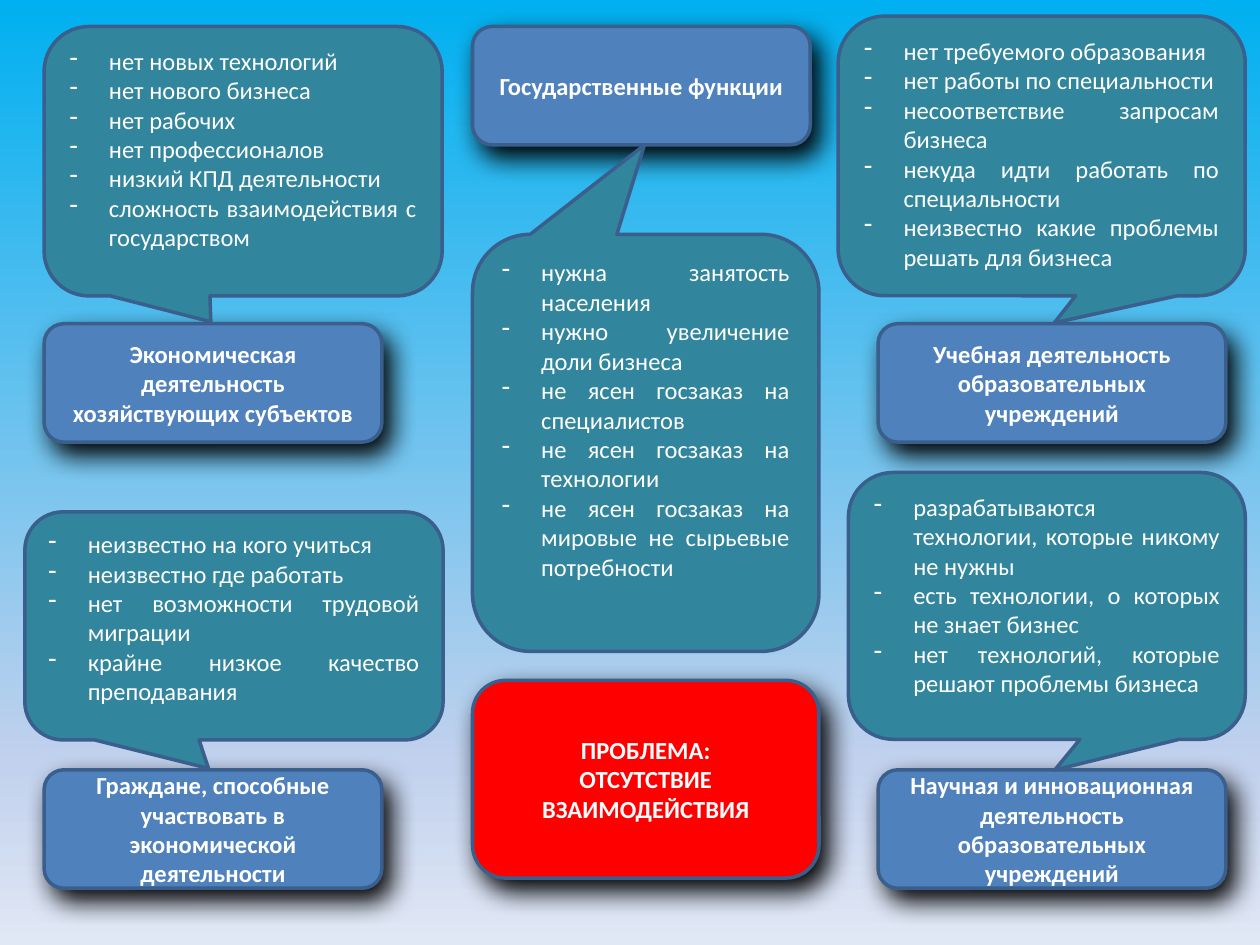
from copy import deepcopy

from lxml.etree import SubElement
from pptx import Presentation
from pptx.dml.color import RGBColor
from pptx.enum.shapes import MSO_SHAPE as Shape
from pptx.enum.text import MSO_ANCHOR as Anchor, PP_ALIGN as Align
from pptx.oxml import parse_xml
from pptx.oxml.ns import nsdecls, qn
from pptx.util import Pt

WHITE = RGBColor(0xFF, 0xFF, 0xFF)
BLUE = RGBColor(0x4F, 0x81, 0xBD)
OUTLINE = RGBColor(0x3A, 0x5F, 0x8C)
TEAL = RGBColor(0x31, 0x85, 0x9C)
RED = RGBColor(0xFF, 0x00, 0x00)
SKY = ((0, RGBColor(0x00, 0xB0, 0xF0)),
       (0.81, RGBColor(0xC2, 0xD1, 0xED)),
       (1, RGBColor(0xE1, 0xE8, 0xF5)))

LEFT, MIDDLE, RIGHT = 25.2, 270, 501.8
LEFT_WIDTH, RIGHT_WIDTH, LABEL_HEIGHT = 193, 198.7, 67.7
TOP, UPPER, LOWER = 15.1, 185, 439.9

LABELS = (
    (LEFT, UPPER, LEFT_WIDTH, "Экономическая деятельность хозяйствующих субъектов"),
    (RIGHT, UPPER, RIGHT_WIDTH, "Учебная деятельность образовательных учреждений"),
    (LEFT, LOWER, LEFT_WIDTH, "Граждане, способные участвовать в экономической деятельности"),
    (RIGHT, LOWER, RIGHT_WIDTH,
     "Научная и инновационная деятельность образовательных учреждений"),
    (MIDDLE, TOP, LEFT_WIDTH, "Государственные функции"),
)

CALLOUTS = (
    ((LEFT, TOP, 227.5, 154), (-0.081, 0.596), False, (
        "нет новых технологий",
        "нет нового бизнеса",
        "нет рабочих",
        "нет профессионалов",
        "низкий КПД деятельности",
        "сложность взаимодействия с государством")),
    ((14.2, 292.5, 239, 130.3), (-0.061, 0.625), False, (
        "неизвестно на кого учиться",
        "неизвестно где работать",
        "нет возможности трудовой миграции",
        "крайне низкое качество преподавания")),
    ((479, 9.2, 232.6, 159.8), (-0.031, 0.597), True, (
        "нет требуемого образования",
        "нет работы по специальности",
        "несоответствие запросам бизнеса",
        "некуда идти работать по специальности",
        "неизвестно какие проблемы решать для бизнеса")),
    ((484.8, 270, 226.8, 152.5), (-0.02, 0.615), True, (
        "разрабатываются технологии, которые никому не нужны",
        "есть технологии, о которых не знает бизнес",
        "нет технологий, которые решают проблемы бизнеса")),
    ((MIDDLE, 133.9, 198, 238.3), (0.004, -0.714), True, (
        "нужна занятость населения",
        "нужно увеличение доли бизнеса",
        "не ясен госзаказ на специалистов",
        "не ясен госзаказ на технологии",
        "не ясен госзаказ на мировые не сырьевые потребности")),
)


class Board:
    """Holds the style and the current slide, and draws each kind of element."""

    font = "Calibri"
    size = Pt(14)
    line_width = Pt(2)
    indent = Pt(22.5)

    def __init__(self, page):
        self.page = page

    def background(self, colours):
        fill = self.page.background.fill
        fill.gradient()
        fill.gradient_angle = 270
        last = fill.gradient_stops[1]._gs
        last.addnext(deepcopy(last))
        for stop, (position, colour) in zip(fill.gradient_stops, colours):
            stop.position = position
            stop.color.rgb = colour

    def shape(self, kind, frame, colour, anchor):
        box = self.page.shapes.add_shape(kind, *(Pt(length) for length in frame))
        box.shadow.inherit = False
        box.fill.solid()
        box.fill.fore_color.rgb = colour
        box.line.color.rgb = OUTLINE
        box.line.width = self.line_width
        box.text_frame.word_wrap = True
        box.text_frame.vertical_anchor = anchor
        return box

    def style(self, para, align, bold):
        para.alignment = align
        for span in para.runs:
            span.font.name = self.font
            span.font.size = self.size
            span.font.bold = bold
            span.font.color.rgb = WHITE

    def label(self, frame, text, colour=BLUE):
        box = self.shape(Shape.ROUNDED_RECTANGLE, frame, colour, Anchor.MIDDLE)
        effects = box._element.spPr.find(qn("a:effectLst"))
        effects.append(parse_xml(
            f'<a:outerShdw {nsdecls("a")} blurRad="{Pt(15)}" dist="{Pt(8)}" '
            f'dir="{55 * 60000}" algn="tl" rotWithShape="0">'
            '<a:srgbClr val="000000"/></a:outerShdw>'))
        para = box.text_frame.paragraphs[0]
        para.text = text
        self.style(para, Align.CENTER, True)

    def callout(self, frame, tip, flipped, items):
        box = self.shape(Shape.ROUNDED_RECTANGULAR_CALLOUT, frame, TEAL, Anchor.TOP)
        box.adjustments[0], box.adjustments[1] = tip
        box.adjustments[2] = 0.167
        if flipped:
            box._element.spPr.xfrm.set("flipH", "1")
        box.text_frame.text = "\n".join(items)
        for para in box.text_frame.paragraphs:
            self.style(para, Align.JUSTIFY, False)
            properties = para._p.get_or_add_pPr()
            properties.set("marL", str(self.indent))
            properties.set("indent", str(-self.indent))
            SubElement(properties, qn("a:buChar"), char="-")


def main():
    deck = Presentation()
    deck.slide_width, deck.slide_height = Pt(720), Pt(540)
    board = Board(deck.slides.add_slide(deck.slide_layouts[6]))
    board.background(SKY)
    for left, top, width, text in LABELS:
        board.label((left, top, width, LABEL_HEIGHT), text)
    for callout in CALLOUTS:
        board.callout(*callout)
    board.label((MIDDLE, 388.8, 198, 113), "ПРОБЛЕМА:\vОТСУТСТВИЕ ВЗАИМОДЕЙСТВИЯ", RED)
    deck.save("out.pptx")


if __name__ == "__main__":
    main()
